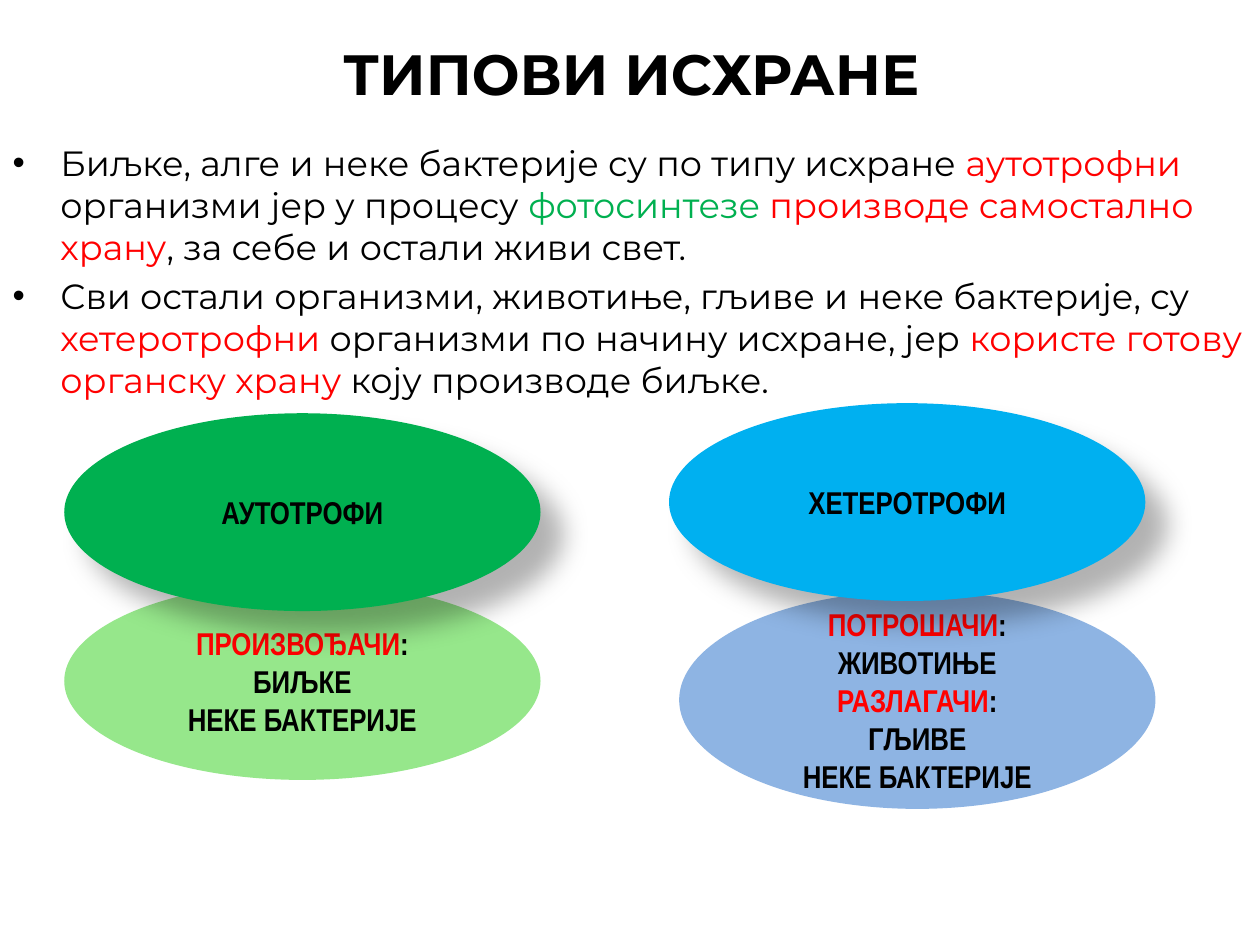
from dataclasses import dataclass

from lxml import etree
from pptx import Presentation
from pptx.dml.color import RGBColor
from pptx.enum.shapes import MSO_SHAPE
from pptx.enum.text import MSO_ANCHOR, MSO_AUTO_SIZE, PP_ALIGN
from pptx.oxml.ns import qn
from pptx.util import Inches, Pt

OVAL = MSO_SHAPE.OVAL
MIDDLE = MSO_ANCHOR.MIDDLE
FIXED = MSO_AUTO_SIZE.NONE
LEFT, CENTER = PP_ALIGN.LEFT, PP_ALIGN.CENTER
BLACK, RED, GREEN = "000000", "FF0000", "00B050"
WIDE, TALL = 3.78, 1.57

Run = tuple[str, str]
Lines = list[list[Run]]


@dataclass
class Oval:
    left: float
    top: float
    fill: str
    lines: Lines
    height: float = TALL
    shade: bool = False


def color(code: str) -> RGBColor:
    return RGBColor.from_string(code)


def write(shape, lines: Lines, *, font: str, size: float, bold: bool = False,
          align=CENTER, space: float = 0, anchor=None) -> None:
    frame = shape.text_frame
    frame.word_wrap = True
    frame.auto_size = FIXED
    if anchor is not None:
        frame.vertical_anchor = anchor
    for place, runs in enumerate(lines):
        para = frame.add_paragraph() if place else frame.paragraphs[0]
        para.alignment = align
        para.space_before = Pt(space)
        for text, code in runs:
            run = para.add_run()
            run.text = text
            run.font.name = font
            run.font.size = Pt(size)
            run.font.bold = bold
            run.font.color.rgb = color(code)


def move(shape, left: float, top: float, width: float, height: float) -> None:
    shape.left, shape.top = Inches(left), Inches(top)
    shape.width, shape.height = Inches(width), Inches(height)


def bullet(para, indent: float) -> None:
    props = para._p.get_or_add_pPr()
    props.set("marL", str(Inches(indent)))
    props.set("indent", str(-Inches(indent)))
    etree.SubElement(props, qn("a:buFont"), typeface="Arial")
    etree.SubElement(props, qn("a:buChar"), char="•")


def shade(shape) -> None:
    effects = shape._element.spPr.find(qn("a:effectLst"))
    outer = etree.SubElement(
        effects, qn("a:outerShdw"), blurRad=str(Pt(15)), dist=str(Pt(18)),
        dir=str(45 * 60000), algn="tl", rotWithShape="0")
    tone = etree.SubElement(outer, qn("a:srgbClr"), val=BLACK)
    etree.SubElement(tone, qn("a:alpha"), val="30000")


def draw(slide, oval: Oval) -> None:
    shape = slide.shapes.add_shape(
        OVAL, Inches(oval.left), Inches(oval.top), Inches(WIDE), Inches(oval.height))
    shape.shadow.inherit = False
    shape.fill.solid()
    shape.fill.fore_color.rgb = color(oval.fill)
    shape.line.fill.background()
    if oval.shade:
        shade(shape)
    write(shape, oval.lines, font="Arial Narrow", size=18, bold=True, anchor=MIDDLE)


POINTS: Lines = [
    [("Биљке, алге и неке бактерије су по типу исхране ", BLACK),
     ("аутотрофни", RED),
     (" организми јер у процесу ", BLACK),
     ("фотосинтезе ", GREEN),
     ("производе самостално храну", RED),
     (", за себе и остали живи свет.", BLACK)],
    [("Сви остали организми, животиње, гљиве и неке бактерије, су ", BLACK),
     ("хетеротрофни", RED),
     (" организми по начину исхране, јер ", BLACK),
     ("користе готову органску храну ", RED),
     ("коју производе биљке.", BLACK)],
]

OVALS = [
    Oval(5.39, 4.69, "8EB4E3", [
        [("ПОТРОШАЧИ", RED), (":", BLACK)],
        [("ЖИВОТИЊЕ", BLACK)],
        [("РАЗЛАГАЧИ", RED), (":", BLACK)],
        [("ГЉИВЕ", BLACK)],
        [("НЕКЕ БАКТЕРИЈЕ", BLACK)],
    ], height=1.73),
    Oval(0.51, 4.62, "96E78B", [
        [("ПРОИЗВОЂАЧИ", RED), (":", BLACK)],
        [("БИЉКЕ", BLACK)],
        [("НЕКЕ БАКТЕРИЈЕ", BLACK)],
    ]),
    Oval(5.31, 3.2, "00B0F0", [[("ХЕТЕРОТРОФИ", BLACK)]], shade=True),
    Oval(0.51, 3.28, GREEN, [[("АУТОТРОФИ", BLACK)]], shade=True),
]


def main() -> None:
    deck = Presentation()
    deck.slide_width, deck.slide_height = Inches(10), Inches(7.5)
    slide = deck.slides.add_slide(deck.slide_layouts[1])

    title = slide.shapes.title
    move(title, 0.51, 0.23, 9, 0.69)
    write(title, [[("ТИПОВИ ИСХРАНЕ", BLACK)]],
          font="Montserrat", size=32.4, bold=True, anchor=MIDDLE)

    body = slide.placeholders[1]
    move(body, 0, 1.07, 10, 2.13)
    write(body, POINTS, font="Montserrat", size=20, align=LEFT, space=4)
    for para in body.text_frame.paragraphs:
        bullet(para, 0.38)

    for oval in OVALS:
        draw(slide, oval)
    deck.save("out.pptx")


if __name__ == "__main__":
    main()
